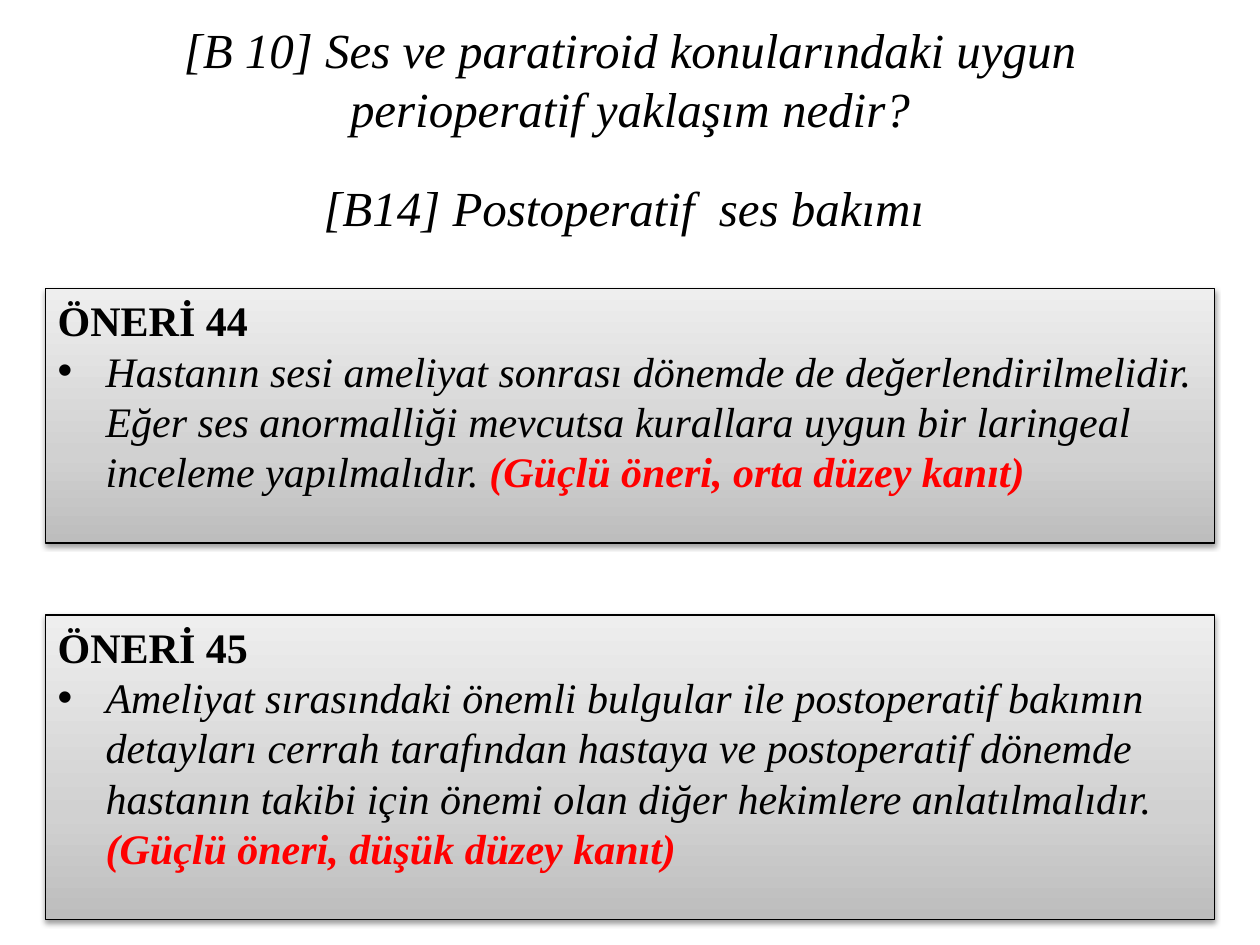
import pptx
import pptx.dml.color
import pptx.enum.shapes
import pptx.enum.text
import pptx.oxml
import pptx.oxml.ns
import pptx.util
from pptx.util import Inches

FONT = "Times New Roman"
BLACK, RED = "000000", "FF0000"
GRADIENT = [(0, "BDBDBD"), (35, "D1D1D1"), (100, "EEEEEE")]
NS = pptx.oxml.ns.nsdecls("a")

HEADINGS = [
    (0, "[B 10] Ses ve paratiroid konularındaki uygun perioperatif yaklaşım nedir?"),
    (1.02, "[B14] Postoperatif  ses bakımı "),
]
RECOMMENDATIONS = [
    (2.29, 2.02, "ÖNERİ 44",
     "Hastanın sesi ameliyat sonrası dönemde de değerlendirilmelidir. "
     "Eğer ses anormalliği mevcutsa kurallara uygun bir laringeal "
     "inceleme yapılmalıdır. ",
     "(Güçlü öneri, orta düzey kanıt)"),
    (4.88, 2.42, "ÖNERİ 45",
     "Ameliyat sırasındaki önemli bulgular ile postoperatif bakımın "
     "detayları cerrah tarafından hastaya ve postoperatif dönemde "
     "hastanın takibi için önemi olan diğer hekimlere anlatılmalıdır. ",
     "(Güçlü öneri, düşük düzey kanıt)"),
]


def color(value):
    return pptx.dml.color.RGBColor.from_string(value)


def format_span(span, size, value=BLACK, bold=False, italic=False):
    font = span.font
    font.name = FONT
    font.size = pptx.util.Pt(size)
    font.bold = bold
    font.italic = italic
    font.color.rgb = color(value)


def add_heading(page, top, text):
    box = page.shapes.add_textbox(Inches(0.5), Inches(top), Inches(9), Inches(1.25))
    frame = box.text_frame
    frame.word_wrap = True
    frame.vertical_anchor = pptx.enum.text.MSO_ANCHOR.MIDDLE
    frame.text = text
    para = frame.paragraphs[0]
    para.alignment = pptx.enum.text.PP_ALIGN.CENTER
    format_span(para.runs[0], 28, italic=True)


def fill_gradient(box):
    box.fill.gradient()
    box.fill.gradient_angle = 90
    stops = box._element.spPr.find(".//" + pptx.oxml.ns.qn("a:gsLst"))
    stops.clear()
    for position, value in GRADIENT:
        stops.append(pptx.oxml.parse_xml(
            f'<a:gs {NS} pos="{position * 1000}"><a:srgbClr val="{value}"/></a:gs>'))


def add_shadow(box):
    box.shadow.inherit = False
    effects = box._element.spPr.find(pptx.oxml.ns.qn("a:effectLst"))
    blur, distance = pptx.util.Pt(3.1), pptx.util.Pt(1.6)
    effects.append(pptx.oxml.parse_xml(
        f'<a:outerShdw {NS} blurRad="{blur}" dist="{distance}" dir="5400000" '
        f'rotWithShape="0"><a:srgbClr val="{BLACK}"><a:alpha val="38000"/>'
        '</a:srgbClr></a:outerShdw>'))


def add_bullet(para):
    properties = para._p.get_or_add_pPr()
    properties.set("marL", str(Inches(0.38)))
    properties.set("indent", str(-Inches(0.38)))
    properties.append(pptx.oxml.parse_xml(f'<a:buFont {NS} typeface="Arial"/>'))
    properties.append(pptx.oxml.parse_xml(f'<a:buChar {NS} char="•"/>'))


def add_recommendation(page, top, height, label, advice, grade):
    box = page.shapes.add_shape(
        pptx.enum.shapes.MSO_SHAPE.RECTANGLE,
        Inches(0.36), Inches(top), Inches(9.28), Inches(height))
    fill_gradient(box)
    box.line.color.rgb = color(BLACK)
    box.line.width = pptx.util.Pt(0.75)
    add_shadow(box)

    frame = box.text_frame
    frame.word_wrap = True
    frame.auto_size = pptx.enum.text.MSO_AUTO_SIZE.SHAPE_TO_FIT_TEXT
    frame.vertical_anchor = pptx.enum.text.MSO_ANCHOR.TOP
    frame.text = f"{label}\n{advice}"
    title, body = frame.paragraphs
    for para in (title, body):
        para.alignment = pptx.enum.text.PP_ALIGN.LEFT
    add_bullet(body)
    format_span(title.runs[0], 24, bold=True)
    format_span(body.runs[0], 24, italic=True)

    # Strength of evidence closes the advice
    span = body.add_run()
    span.text = grade
    format_span(span, 24, RED, bold=True, italic=True)


def main():
    deck = pptx.Presentation()
    deck.slide_width, deck.slide_height = Inches(10), Inches(7.5)
    page = deck.slides.add_slide(deck.slide_layouts[6])

    # Question and topic
    for heading in HEADINGS:
        add_heading(page, *heading)

    # Recommendation panels
    for recommendation in RECOMMENDATIONS:
        add_recommendation(page, *recommendation)

    deck.save("out.pptx")


if __name__ == "__main__":
    main()
